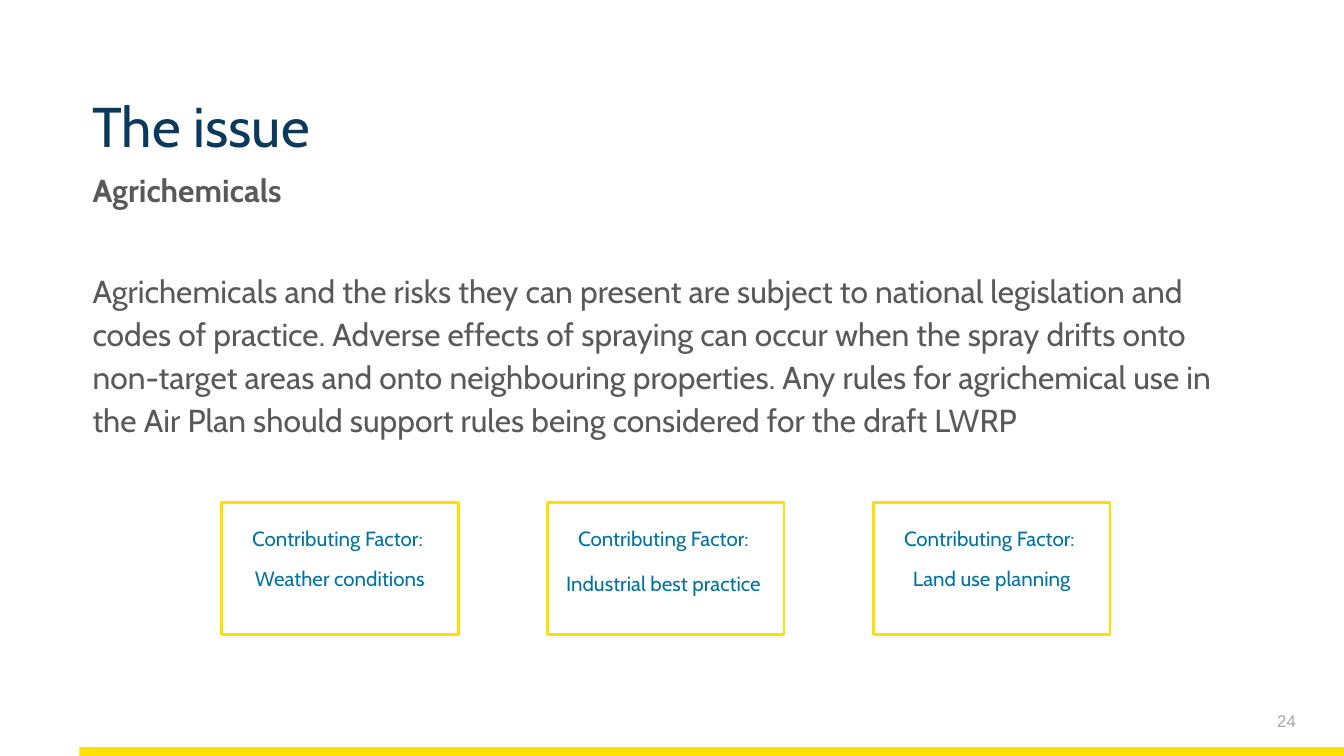
import pptx
import pptx.dml.color
import pptx.enum.shapes
import pptx.enum.text
import pptx.util
from dataclasses import dataclass
from typing import Optional, Union

Inches, Pt = pptx.util.Inches, pptx.util.Pt
ALIGN = pptx.enum.text.PP_ALIGN
ANCHOR = pptx.enum.text.MSO_ANCHOR

COLORS = {"yellow": "FFE000", "navy": "0A395B", "grey": "595959",
          "blue": "0073A0", "pale": "A6A6A6"}

# Layout in inches, on a 16:9 slide
WIDTH = 10
HEIGHT = WIDTH * 9 / 16
MARGIN, TEXT_WIDTH = 0.59, 8.72
BOX_TOP, BOX_WIDTH, BOX_HEIGHT = 3.74, 1.76, 0.98
FIRST_BOX, LAST_BOX = 1.65, 6.5


@dataclass
class Style:
    size: float
    color: str
    font: str = "Cabin"
    bold: bool = False
    align: ALIGN = ALIGN.LEFT
    anchor: ANCHOR = ANCHOR.TOP
    spacing: Optional[Union[float, pptx.util.Length]] = None
    after: float = 0


@dataclass
class TextBlock:
    text: str
    left: float
    top: float
    width: float
    height: float
    style: Style


@dataclass
class Factor:
    text: str
    spacing: Union[float, pptx.util.Length]


def rgb(name: str) -> pptx.dml.color.RGBColor:
    return pptx.dml.color.RGBColor.from_string(COLORS[name])


def format_text(tf, style: Style) -> None:
    tf.word_wrap = True
    tf.vertical_anchor = style.anchor
    for p in tf.paragraphs:
        p.alignment = style.align
        p.line_spacing = style.spacing
        p.space_after = Pt(style.after)
        for r in p.runs:
            r.font.name = style.font
            r.font.size = Pt(style.size)
            r.font.bold = style.bold
            r.font.color.rgb = rgb(style.color)


def add_text(s, block: TextBlock) -> None:
    sp = s.shapes.add_textbox(Inches(block.left), Inches(block.top),
                              Inches(block.width), Inches(block.height))
    sp.text_frame.text = block.text
    format_text(sp.text_frame, block.style)


def add_rect(s, left: float, top: float, width: float, height: float):
    sp = s.shapes.add_shape(pptx.enum.shapes.MSO_SHAPE.RECTANGLE, Inches(left),
                            Inches(top), Inches(width), Inches(height))
    sp.shadow.inherit = False
    return sp


def add_factor(s, left: float, factor: Factor) -> None:
    sp = add_rect(s, left, BOX_TOP, BOX_WIDTH, BOX_HEIGHT)
    sp.fill.background()
    sp.line.color.rgb = rgb("yellow")
    sp.line.width = Pt(1.5)
    tf = sp.text_frame
    tf.text = "Contributing Factor: \n" + factor.text
    format_text(tf, Style(11, "blue", align=ALIGN.CENTER, spacing=Pt(22), after=2))
    tf.paragraphs[1].line_spacing = factor.spacing


TEXTS = [
    TextBlock("The issue", MARGIN, 0.76, TEXT_WIDTH, 0.41,
              Style(30, "navy", anchor=ANCHOR.MIDDLE, spacing=0.9)),
    TextBlock("Agrichemicals", MARGIN, 1.2, TEXT_WIDTH, 0.28,
              Style(17, "grey", bold=True, spacing=Pt(22), after=2)),
    TextBlock("Agrichemicals and the risks they can present are subject to national "
              "legislation and codes of practice. Adverse effects of spraying can occur "
              "when the spray drifts onto non-target areas and onto neighbouring "
              "properties. Any rules for agrichemical use in the Air Plan should support "
              "rules being considered for the draft LWRP",
              MARGIN, 1.94, TEXT_WIDTH, 1.42,
              Style(17, "grey", spacing=Pt(23), after=2)),
    TextBlock("24", 7.49, 5.21, 2.25, 0.3,
              Style(9, "pale", font="Arial", align=ALIGN.RIGHT, anchor=ANCHOR.MIDDLE)),
]

FACTORS = [
    Factor("Weather conditions", 1.5),
    Factor("Industrial best practice ", Pt(22)),
    Factor("Land use planning", 1.5),
]


def main() -> None:
    prs = pptx.Presentation()
    prs.slide_width, prs.slide_height = Inches(WIDTH), Inches(HEIGHT)
    s = prs.slides.add_slide(prs.slide_layouts[6])

    # Footer bar
    bar = add_rect(s, MARGIN, 5.56, WIDTH - MARGIN, 0.08)
    bar.fill.solid()
    bar.fill.fore_color.rgb = rgb("yellow")
    bar.line.fill.background()

    # Heading, body and slide number
    for block in TEXTS:
        add_text(s, block)

    # Contributing factors, evenly spaced
    pitch = (LAST_BOX - FIRST_BOX) / (len(FACTORS) - 1)
    for column, factor in enumerate(FACTORS):
        add_factor(s, FIRST_BOX + column * pitch, factor)

    prs.save("out.pptx")


if __name__ == "__main__":
    main()
